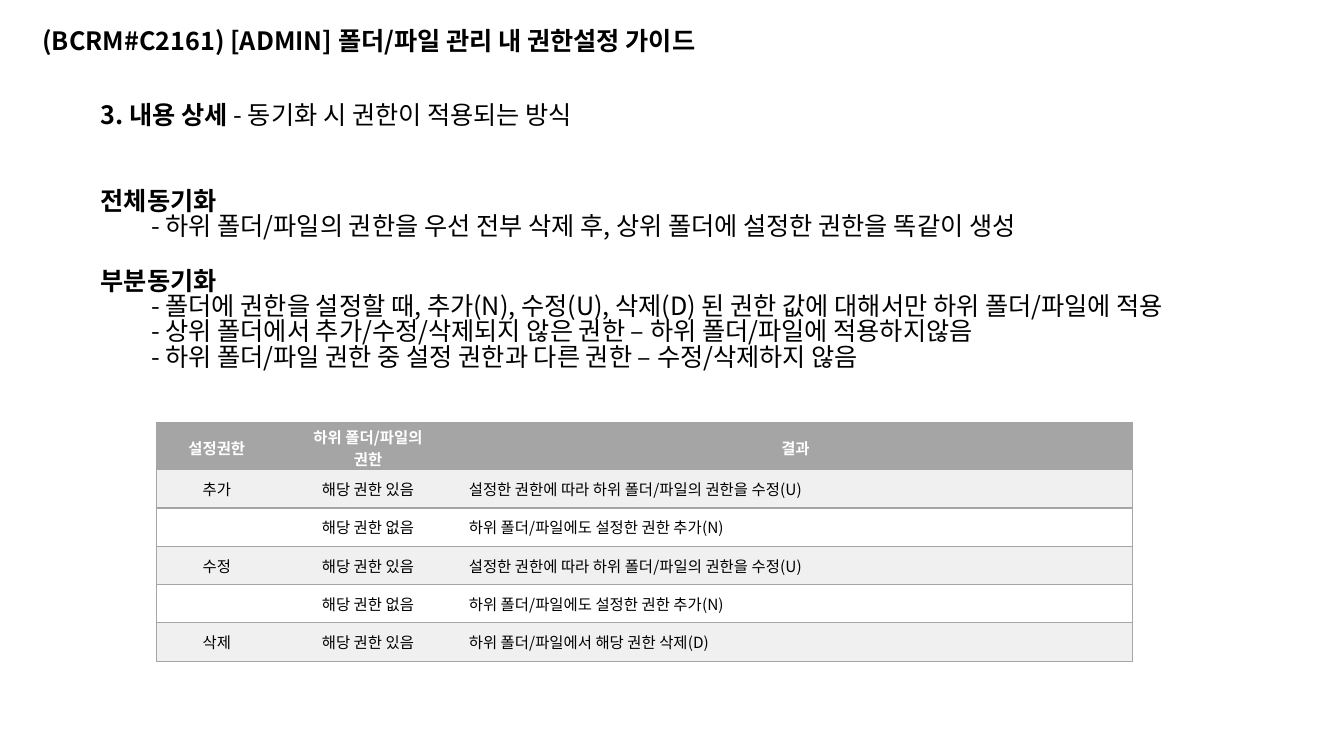
from lxml import etree
from pptx import Presentation
from pptx.dml.color import RGBColor
from pptx.enum.text import MSO_ANCHOR, PP_ALIGN
from pptx.oxml import parse_xml
from pptx.oxml.ns import nsdecls, qn
from pptx.util import Pt

PX = 9144
FONT = "Noto Sans CJK KR"
LINE_SPACING = 0.83
LINE_HEIGHT = 21.6
GRAY = "A5A5A5"


def style(span, size, color, bold):
    span.font.size = Pt(size)
    span.font.bold = bold
    span.font.name = FONT
    span.font.color.rgb = RGBColor.from_string(color)
    etree.SubElement(span.font._element, qn("a:ea"), typeface=FONT)


def add_border(cell, side):
    cell._tc.get_or_add_tcPr().append(parse_xml(
        f'<a:ln{side} {nsdecls("a")} w="12700"><a:solidFill>'
        f'<a:srgbClr val="{GRAY}"/></a:solidFill></a:ln{side}>'))


deck = Presentation()
deck.slide_width, deck.slide_height = 1333 * PX, 750 * PX
page = deck.slides.add_slide(deck.slide_layouts[5])

title = page.shapes.title
title.left, title.top, title.width, title.height = 32 * PX, 25 * PX, 1061 * PX, 40 * PX
title.text_frame.text = "(BCRM#C2161) [ADMIN] 폴더/파일 관리 내 권한설정 가이드"
title.text_frame.vertical_anchor = MSO_ANCHOR.TOP
title_para = title.text_frame.paragraphs[0]
title_para.alignment = PP_ALIGN.LEFT
title_para.line_spacing = LINE_SPACING
style(title_para.runs[0], 18, "000000", True)

# Each line: level, blank lines above, spans of (text, bold)
body_lines = [
    (0, 0, [("3. 내용 상세", True), (" - 동기화 시 권한이 적용되는 방식", False)]),
    (0, 2, [("전체동기화", True)]),
    (1, 0, [("- 하위 폴더/파일의 권한을 우선 전부 삭제 후, 상위 폴더에 설정한 권한을 똑같이 생성", False)]),
    (0, 1, [("부분동기화", True)]),
    (1, 0, [("- 폴더에 권한을 설정할 때, 추가(N), 수정(U), 삭제(D) 된 권한 값에 대해서만 하위 폴더/파일에 적용", False)]),
    (1, 0, [("- 상위 폴더에서 추가/수정/삭제되지 않은 권한 – 하위 폴더/파일에 적용하지않음", False)]),
    (1, 0, [("- 하위 폴더/파일 권한 중 설정 권한과 다른 권한 – 수정/삭제하지 않음", False)]),
]
body = page.shapes.add_textbox(90 * PX, 99 * PX, 1202 * PX, 343 * PX).text_frame
body.word_wrap = True
for index, (level, gap, spans) in enumerate(body_lines):
    para = body.add_paragraph() if index else body.paragraphs[0]
    para.level = level
    para.line_spacing = LINE_SPACING
    if gap:
        para.space_before = Pt(gap * LINE_HEIGHT)
    for text, bold in spans:
        span = para.add_run()
        span.text = text
        style(span, 18, "000000", bold)

rows = [
    ("설정권한", "하위 폴더/파일의\n권한", "결과"),
    ("추가", "해당 권한 있음", "설정한 권한에 따라 하위 폴더/파일의 권한을 수정(U)"),
    ("", "해당 권한 없음", "하위 폴더/파일에도 설정한 권한 추가(N)"),
    ("수정", "해당 권한 있음", "설정한 권한에 따라 하위 폴더/파일의 권한을 수정(U)"),
    ("", "해당 권한 없음", "하위 폴더/파일에도 설정한 권한 추가(N)"),
    ("삭제", "해당 권한 있음", "하위 폴더/파일에서 해당 권한 삭제(D)"),
]
widths = [120, 180, 668]
heights = [47] + [38] * 5
table = page.shapes.add_table(len(rows), len(widths), 155 * PX, 419 * PX,
                              sum(widths) * PX, sum(heights) * PX).table
table._tbl.tblPr.find(qn("a:tableStyleId")).text = "{2D5ABB26-0587-4C30-8999-92F81FD0307C}"
table.horz_banding = False
for column, width in zip(table.columns, widths):
    column.width = width * PX
for r, (row, height) in enumerate(zip(rows, heights)):
    table.rows[r].height = height * PX
    header = r == 0
    for c, text in enumerate(row):
        cell = table.cell(r, c)
        cell.text_frame.text = text
        cell.vertical_anchor = MSO_ANCHOR.MIDDLE
        if header:
            cell.margin_top, cell.margin_bottom = 3 * PX, 0
        for side, shown in (("L", c == 0), ("R", c == 2), ("T", True), ("B", True)):
            if shown:
                add_border(cell, side)
        cell.fill.solid()
        cell.fill.fore_color.rgb = RGBColor.from_string(
            GRAY if header else "F0F0F0" if r % 2 else "FFFFFF")
        for para in cell.text_frame.paragraphs:
            para.alignment = PP_ALIGN.CENTER if header or c < 2 else PP_ALIGN.LEFT
            for span in para.runs:
                style(span, 11, "FFFFFF" if header else "000000", header)
            if not para.runs:
                etree.SubElement(para._p, qn("a:endParaRPr"), sz="1100")

deck.save("out.pptx")
